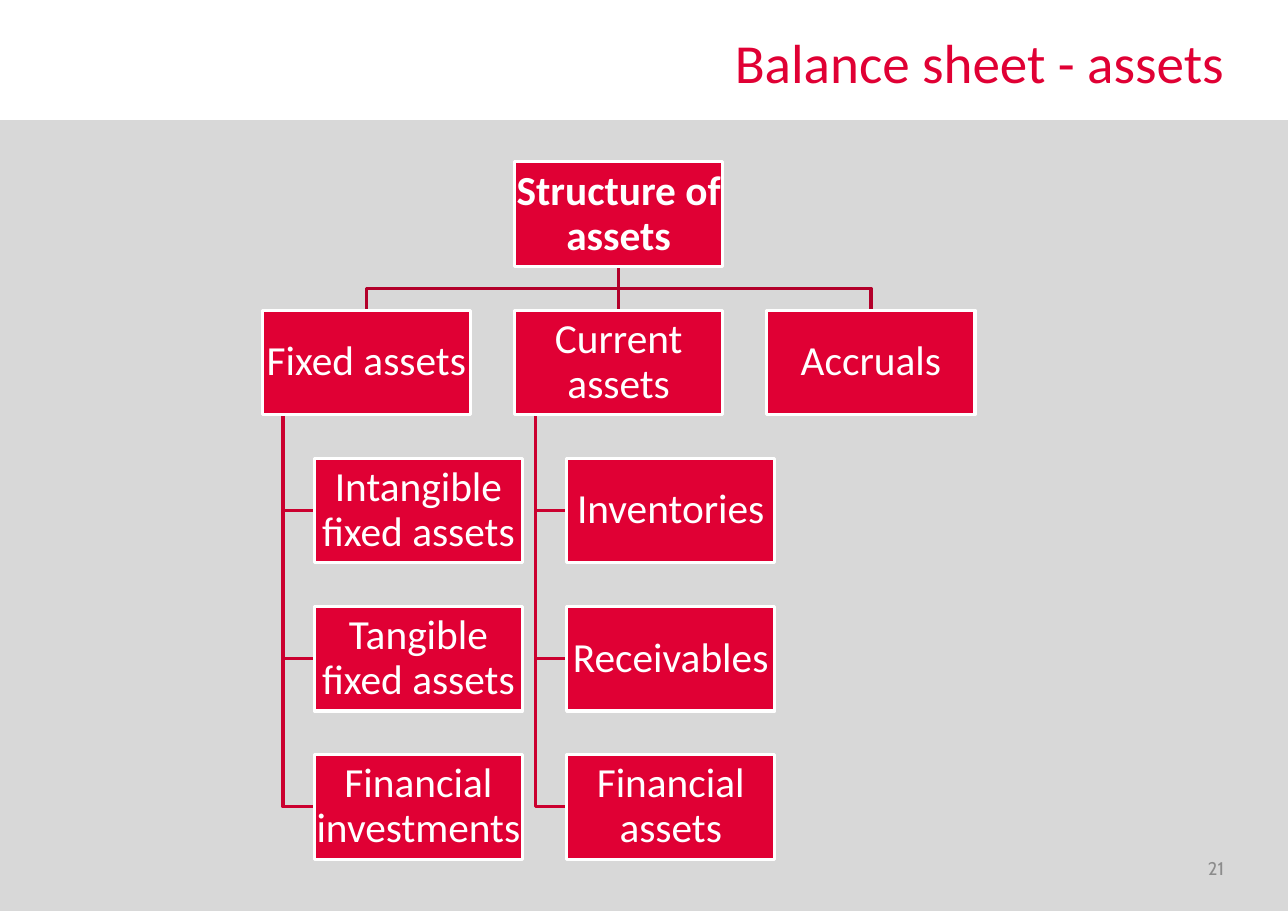
import pptx
import pptx.dml.color
import pptx.enum.shapes
import pptx.enum.text
import pptx.oxml.ns
import pptx.util
from dataclasses import dataclass

Inches = pptx.util.Inches
Color = pptx.dml.color.RGBColor.from_string
Align = pptx.enum.text.PP_ALIGN
RECTANGLE = pptx.enum.shapes.MSO_SHAPE.RECTANGLE


@dataclass(frozen=True)
class Theme:
    red: str = "E00034"
    trunk: str = "B3002A"
    branch: str = "CB002F"
    panel: str = "D8D8D8"
    white: str = "FFFFFF"
    gray: str = "8C8C8C"
    body_font: str = "Calibri"
    number_font: str = "Cabin"
    title_size: int = 36
    box_size: int = 27
    number_size: int = 12
    line_width: int = 2


theme = Theme()

# Grid of the chart, in inches
WIDTH, HEIGHT = 11.69, 8.27
LEFT, TOP = 2.38, 1.47
COLUMN, ROW = 2.29, 1.345
BOX_WIDTH, BOX_HEIGHT = 1.89, 0.95
INDENT, STEM = BOX_WIDTH / 4, BOX_WIDTH / 10
RIGHT_MARGIN = 0.58


def write_text(shape, text, *, size, color, font=theme.body_font, bold=False,
               align=Align.CENTER, spacing=1.0, inset=0.01):
    frame = shape.text_frame
    frame.word_wrap = True
    frame.vertical_anchor = pptx.enum.text.MSO_ANCHOR.MIDDLE
    frame.margin_left = frame.margin_right = Inches(inset)
    frame.margin_top = frame.margin_bottom = Inches(inset)
    paragraph = frame.paragraphs[0]
    paragraph.text = text
    paragraph.alignment = align
    paragraph.line_spacing = spacing
    paragraph.font.name = font
    paragraph.font.size = pptx.util.Pt(size)
    paragraph.font.bold = bold
    paragraph.font.color.rgb = Color(color)


def draw_elbow(points, color):
    corners = [(Inches(x), Inches(y)) for x, y in points]
    builder = slide.shapes.build_freeform(*corners[0])
    builder.add_line_segments(corners[1:], close=False)
    shape = builder.convert_to_shape()
    shape.shadow.inherit = False
    shape.fill.background()
    shape.line.color.rgb = Color(color)
    shape.line.width = pptx.util.Pt(theme.line_width)


presentation = pptx.Presentation()
presentation.slide_width = Inches(WIDTH)
presentation.slide_height = Inches(HEIGHT)
slide = presentation.slides.add_slide(presentation.slide_layouts[6])

# Gray panel
panel_top = 1.09
panel = slide.shapes.add_shape(RECTANGLE, 0, Inches(panel_top), Inches(WIDTH),
                               Inches(HEIGHT - panel_top))
panel.shadow.inherit = False
panel.fill.solid()
panel.fill.fore_color.rgb = Color(theme.panel)
panel.line.fill.background()

# Title and slide number, both ending at the right margin
for text, width, top, height, style in [
    ("Balance sheet - assets", 8.12, 0.2, 0.72,
     dict(size=theme.title_size, color=theme.red)),
    ("21", 2.73, 7.66, 0.44,
     dict(size=theme.number_size, color=theme.gray, font=theme.number_font)),
]:
    label = slide.shapes.add_textbox(Inches(WIDTH - RIGHT_MARGIN - width), Inches(top),
                                     Inches(width), Inches(height))
    write_text(label, text, align=Align.RIGHT, inset=0, **style)

# Asset groups, one per column, with their items below
groups = [
    ("Fixed assets",
     ["Intangible fixed assets", "Tangible fixed assets", "Financial investments"]),
    ("Current assets", ["Inventories", "Receivables", "Financial assets"]),
    ("Accruals", []),
]

# Trunk from the root to the groups
root_left = LEFT + COLUMN
root_center = root_left + BOX_WIDTH / 2
root_bottom = TOP + BOX_HEIGHT
group_top = TOP + ROW
fork = (root_bottom + group_top) / 2
for side in (-1, 1):
    center = root_center + side * COLUMN
    draw_elbow([(root_center, root_bottom), (root_center, fork),
                (center, fork), (center, group_top)], theme.trunk)
trunk = slide.shapes.add_connector(
    pptx.enum.shapes.MSO_CONNECTOR.STRAIGHT, Inches(root_center), Inches(root_bottom),
    Inches(root_center), Inches(group_top))
trunk.line.color.rgb = Color(theme.trunk)
trunk.line.width = pptx.util.Pt(theme.line_width)
trunk.element.spPr.append(pptx.oxml.xmlchemy.OxmlElement("a:effectLst"))

# Branches to the items, and the places of all boxes
boxes = [("Structure of assets", root_left, TOP, True)]
for column, (group, items) in enumerate(groups):
    left = LEFT + column * COLUMN
    boxes.append((group, left, group_top, False))
    for row, item in enumerate(items, start=2):
        top = TOP + row * ROW
        middle = top + BOX_HEIGHT / 2
        draw_elbow([(left + STEM, group_top + BOX_HEIGHT), (left + STEM, middle),
                    (left + INDENT, middle)], theme.branch)
        boxes.append((item, left + INDENT, top, False))

# Boxes
for text, left, top, bold in boxes:
    box = slide.shapes.add_shape(RECTANGLE, Inches(left), Inches(top),
                                 Inches(BOX_WIDTH), Inches(BOX_HEIGHT))
    box.shadow.inherit = False
    box.fill.solid()
    box.fill.fore_color.rgb = Color(theme.red)
    box.line.color.rgb = Color(theme.white)
    box.line.width = pptx.util.Pt(theme.line_width)
    write_text(box, text, size=theme.box_size, color=theme.white, bold=bold, spacing=0.9)

presentation.save("out.pptx")
